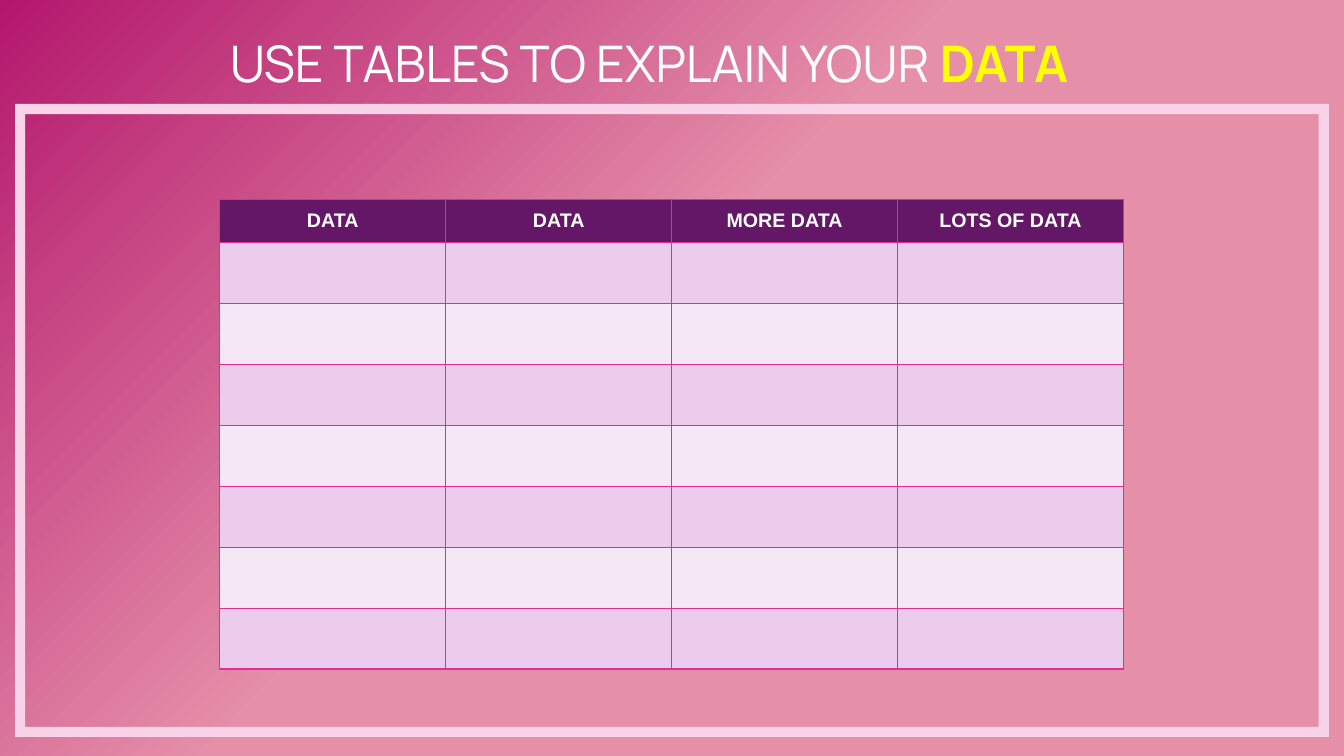
from lxml.etree import SubElement
from pptx import Presentation
from pptx.dml.color import RGBColor
from pptx.enum.shapes import MSO_SHAPE
from pptx.enum.text import MSO_ANCHOR, MSO_AUTO_SIZE, PP_ALIGN
from pptx.oxml import parse_xml
from pptx.oxml.ns import nsdecls, qn
from pptx.util import Pt

WIDE, HIGH = 960, 540
HEADS = ["DATA", "DATA", "MORE DATA", "LOTS OF DATA"]
BODY_ROWS = 7


def color(code):
    return RGBColor.from_string(code)


class Deck:
    white, yellow, pink = "FFFFFF", "FFFF00", "F9D4E8"
    line, head, bands = "E32D91", "641766", ("EBCCEC", "F5E7F6")
    stops = [(0, "B4176D"), (46, "E58FA9"), (100, "E58FA9")]

    def __init__(self):
        self.show = Presentation()
        self.show.slide_width, self.show.slide_height = Pt(WIDE), Pt(HIGH)
        self.slide = self.show.slides.add_slide(self.show.slide_layouts[5])

    def back(self):
        """Fill the background with a gradient from the top left corner."""
        fill = self.slide.background.fill
        fill.solid()
        fill.fore_color.rgb = color(self.white)
        solid = next(self.slide.element.iter(qn("a:solidFill")))
        marks = "".join(
            f'<a:gs pos="{at * 1000}"><a:srgbClr val="{code}"/></a:gs>'
            for at, code in self.stops)
        grad = parse_xml(
            f'<a:gradFill {nsdecls("a")} rotWithShape="1"><a:gsLst>{marks}</a:gsLst>'
            '<a:path path="circle"><a:fillToRect r="100000" b="100000"/></a:path>'
            '</a:gradFill>')
        solid.getparent().replace(solid, grad)

    def font(self, run, face, size, code, bold=False):
        run.font.name, run.font.size, run.font.bold = face, Pt(size), bold
        run.font.color.rgb = color(code)

    def frame(self, *box):
        shape = self.slide.shapes.add_shape(MSO_SHAPE.FRAME, *map(Pt, box))
        shape.adjustments[0] = 0.016
        shape.shadow.inherit = False
        shape.fill.solid()
        shape.fill.fore_color.rgb = color(self.pink)
        shape.line.fill.background()

    def title(self, plain, strong, *box):
        shape = self.slide.shapes.title
        shape.left, shape.top, shape.width, shape.height = map(Pt, box)
        frame = shape.text_frame
        frame.auto_size = MSO_AUTO_SIZE.NONE
        frame.word_wrap = True
        frame.vertical_anchor = MSO_ANCHOR.BOTTOM
        frame.margin_left = frame.margin_right = Pt(7.2)
        frame.margin_top = frame.margin_bottom = Pt(7.2)
        frame.text = plain
        para = frame.paragraphs[0]
        para.alignment = PP_ALIGN.LEFT
        para.line_spacing = 0.9
        self.font(para.runs[0], "Manrope", 36, self.white)
        run = para.add_run()
        run.text = strong
        self.font(run, "Manrope", 36, self.yellow, True)

    def edge(self, cell):
        """Draw the four borders of a cell."""
        props = cell._tc.get_or_add_tcPr()
        for spot, side in enumerate("LRTB"):
            line = SubElement(props, qn(f"a:ln{side}"), w=str(Pt(1)))
            fill = SubElement(line, qn("a:solidFill"))
            SubElement(fill, qn("a:srgbClr"), val=self.line)
            props.insert(spot, line)

    def table(self, heads, count, left, top, width, first, rest):
        wide, high = width * len(heads), first + rest * count
        grid = self.slide.shapes.add_table(
            count + 1, len(heads), Pt(left), Pt(top), Pt(wide), Pt(high)).table
        for col in grid.columns:
            col.width = Pt(width)
        for at, row in enumerate(grid.rows):
            row.height = Pt(rest if at else first)
            for cell in row.cells:
                cell.fill.solid()
                code = self.bands[(at - 1) % 2] if at else self.head
                cell.fill.fore_color.rgb = color(code)
                self.edge(cell)
        for cell, text in zip(grid.rows[0].cells, heads):
            cell.vertical_anchor = MSO_ANCHOR.MIDDLE
            cell.text_frame.text = text
            para = cell.text_frame.paragraphs[0]
            para.alignment = PP_ALIGN.CENTER
            self.font(para.runs[0], "Arial", 14, self.white, True)


def main():
    deck = Deck()
    deck.back()
    deck.frame(10.8, 74.2, 938.4, 452.2)
    deck.title("USE TABLES TO EXPLAIN YOUR ", "DATA", 157, 19.4, 646, 54.8)
    deck.table(HEADS, BODY_ROWS, 157, 142.5, 161.4, 31, 43.5)
    deck.show.save("out.pptx")


if __name__ == "__main__":
    main()
